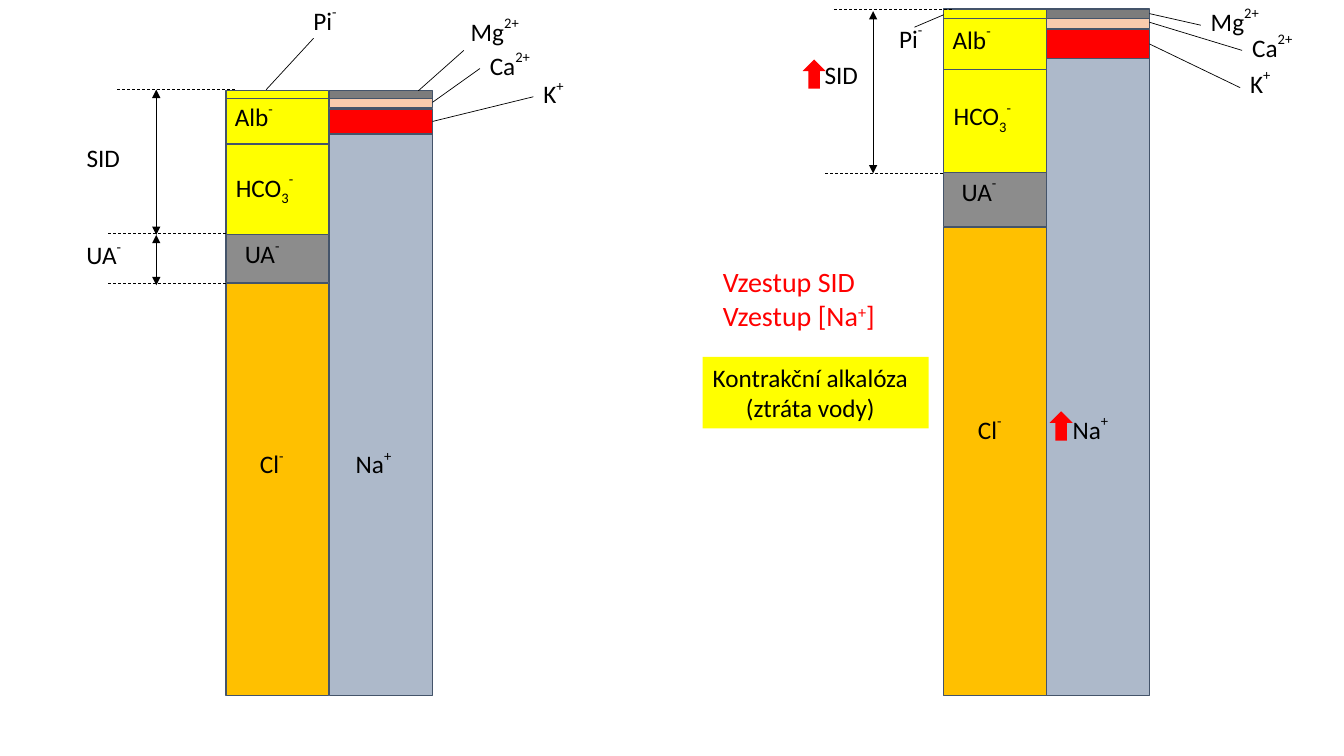
from lxml.etree import SubElement
from pptx import Presentation
from pptx.dml.color import RGBColor
from pptx.enum.dml import MSO_LINE
from pptx.enum.shapes import MSO_CONNECTOR, MSO_SHAPE
from pptx.enum.text import MSO_AUTO_SIZE, PP_ALIGN
from pptx.oxml.ns import qn
from pptx.util import Inches, Pt

FONT = "Calibri"
COLORS = {
    "Na": "ADB9CA", "K": "FF0000", "Ca": "F8CBAD", "Mg": "7C7C7C",
    "Cl": "FFC000", "Pi": "FFFF00", "UA": "8C8C8C", "HCO": "FFFF00", "Alb": "FFFF00",
    "outline": "44546A", "black": "000000", "red": "FF0000", "yellow": "FFFF00",
}
IONS = {
    "Pi": [("Pi", 0), ("-", 50)],
    "Mg": [("Mg", 0), ("2+", 50)],
    "Ca": [("Ca", 0), ("2+", 50)],
    "K": [("K", 0), ("+", 50)],
    "Na": [("Na", 0), ("+", 50)],
    "Cl": [("Cl", 0), ("-", 50)],
    "UA": [("UA", 0), ("-", 50)],
    "HCO": [("HCO", 0), ("3", -25), ("-", 50)],
    "Alb": [("Alb", 0), ("-", 50)],
    "SID": [("SID", 0)],
}
LABEL_WIDTHS = {"Pi": 0.56, "Mg": 0.91, "Ca": 0.81, "K": 0.57, "Na": 0.72,
                "Cl": 0.59, "UA": 0.76, "HCO": 1.1, "Alb": 0.78, "SID": 0.75}
BASE, BAR_WIDTH, LABEL_HEIGHT = 6.9, 1.02, 0.5
BARS = [
    ("Na", "cation", 1.33, 5.57), ("K", "cation", 1.08, 0.25),
    ("Ca", "cation", 0.96, 0.11), ("Mg", "cation", 0.9, 0.08),
    ("Cl", "anion", 2.81, 4.09), ("Pi", "anion", 0.9, 0.1),
    ("UA", "anion", 2.32, 0.48), ("HCO", "anion", 1.43, 0.9),
    ("Alb", "anion", 0.98, 0.45),
]
LEFT_SIDE, RIGHT_SIDE = 1, 3
PANELS = [
    {
        "scale": 1, "anion": 2.24, "cation": 3.27,
        "labels": [("Pi", 3.01, -0.02), ("Mg", 4.57, 0.09), ("Ca", 4.76, 0.43),
                   ("K", 5.29, 0.71), ("Na", 3.43, 4.38), ("Cl", 2.48, 4.38),
                   ("UA", 2.33, 2.3), ("HCO", 2.24, 1.64), ("Alb", 2.23, 0.94),
                   ("SID", 0.76, 1.36), ("UA", 0.76, 2.31)],
        "leaders": [(4.6, 0.5, 4.15, 0.9), (2.64, 0.89, 3.11, 0.38)],
        "joined": [(4.76, 0.68, "Ca", RIGHT_SIDE), (5.29, 0.96, "K", RIGHT_SIDE)],
        "dashes": [(2.24, 2.32), (2.33, 0.89), (2.24, 2.81)],
        "spans": [(1.55, 0.89, 2.33), (1.55, 2.33, 2.83)],
    },
    {
        "scale": 1.135, "anion": 9.36, "cation": 10.38,
        "labels": [("Mg", 11.91, -0.01), ("Ca", 12.32, 0.25), ("K", 12.3, 0.61),
                   ("Na", 10.54, 4.04), ("Cl", 9.6, 4.04), ("UA", 9.44, 1.68),
                   ("HCO", 9.36, 0.93), ("Alb", 9.35, 0.17), ("SID", 8.08, 0.54),
                   ("Pi", 8.82, 0.16)],
        "leaders": [],
        "joined": [(12.32, 0.5, "Ca", RIGHT_SIDE), (11.91, 0.25, "Mg", RIGHT_SIDE),
                   (12.3, 0.87, "K", RIGHT_SIDE), (9.07, 0.27, "Pi", LEFT_SIDE)],
        "dashes": [(9.35, 1.72), (9.44, 0.09)],
        "spans": [(8.66, 0.11, 1.72)],
    },
]
DASH_LENGTH = 1.18
RISE_ARROWS = [(7.96, 0.59), (10.41, 4.08)]
RISES = [[("Vzestup SID", 0)], [("Vzestup [Na", 0), ("+", 30), ("]", 0)]]
DIAGNOSIS = [[("Kontrakční alkalóza", 0)], [("(ztráta vody)", 0)]]


def rgb(name):
    return RGBColor.from_string(COLORS[name])


def add_box(slide, kind, x, y, w, h, fill, outline=None):
    s = slide.shapes.add_shape(kind, Inches(x), Inches(y), Inches(w), Inches(h))
    s.shadow.inherit = False
    s.fill.solid()
    s.fill.fore_color.rgb = rgb(fill)
    if outline:
        s.line.color.rgb = rgb(outline)
        s.line.width = Pt(1)
    else:
        s.line.fill.background()
    return s


def add_text(slide, x, y, w, h, paragraphs, size=18, color="black"):
    s = slide.shapes.add_textbox(Inches(x), Inches(y), Inches(w), Inches(h))
    tf = s.text_frame
    tf.word_wrap = False
    tf.auto_size = MSO_AUTO_SIZE.SHAPE_TO_FIT_TEXT
    for i, runs in enumerate(paragraphs):
        p = tf.add_paragraph() if i else tf.paragraphs[0]
        for text, baseline in runs:
            r = p.add_run()
            r.text = text
            r.font.name, r.font.size = FONT, Pt(size)
            r.font.color.rgb = rgb(color)
            if baseline:
                r._r.get_or_add_rPr().set("baseline", str(baseline * 1000))
    return s


def add_line(slide, x1, y1, x2, y2, dashed=False, arrows=False):
    c = slide.shapes.add_connector(
        MSO_CONNECTOR.STRAIGHT, Inches(x1), Inches(y1), Inches(x2), Inches(y2))
    c.line.color.rgb = rgb("black")
    c.line.width = Pt(0.5)
    if dashed:
        c.line.dash_style = MSO_LINE.DASH
    if arrows:
        for end in ("a:headEnd", "a:tailEnd"):
            SubElement(c.line._get_or_add_ln(), qn(end)).set("type", "triangle")
    SubElement(c._element.spPr, qn("a:effectLst"))
    return c


def add_panel(slide, panel):
    bars = {}
    scale = panel["scale"]
    for ion, column, top, height in BARS:
        y = BASE - (BASE - top) * scale
        bars[ion] = add_box(slide, MSO_SHAPE.RECTANGLE, panel[column], y,
                            BAR_WIDTH, height * scale, ion, "outline")
    for ion, x, y in panel["labels"]:
        add_text(slide, x, y, LABEL_WIDTHS[ion], LABEL_HEIGHT, [IONS[ion]])
    for ends in panel["leaders"]:
        add_line(slide, *ends)
    for x, y, ion, side in panel["joined"]:
        add_line(slide, x, y, x, y).end_connect(bars[ion], side)
    for x, y in panel["dashes"]:
        add_line(slide, x, y, x - DASH_LENGTH, y, dashed=True)
    for x, top, bottom in panel["spans"]:
        add_line(slide, x, top, x, bottom, arrows=True)


def main():
    """Build the slide comparing ion columns before and after water loss."""
    prs = Presentation()
    prs.slide_width, prs.slide_height = Inches(13.33), Inches(7.5)
    slide = prs.slides.add_slide(prs.slide_layouts[6])
    for panel in PANELS:
        add_panel(slide, panel)
    for x, y in RISE_ARROWS:
        add_box(slide, MSO_SHAPE.UP_ARROW, x, y, 0.23, 0.29, "red")
    add_text(slide, 7.07, 2.58, 1.81, 0.77, RISES, 20, "red")
    s = add_text(slide, 6.97, 3.54, 2.24, 0.71, DIAGNOSIS)
    s.fill.solid()
    s.fill.fore_color.rgb = rgb("yellow")
    s.text_frame.paragraphs[1].alignment = PP_ALIGN.CENTER
    prs.save("out.pptx")


if __name__ == "__main__":
    main()
